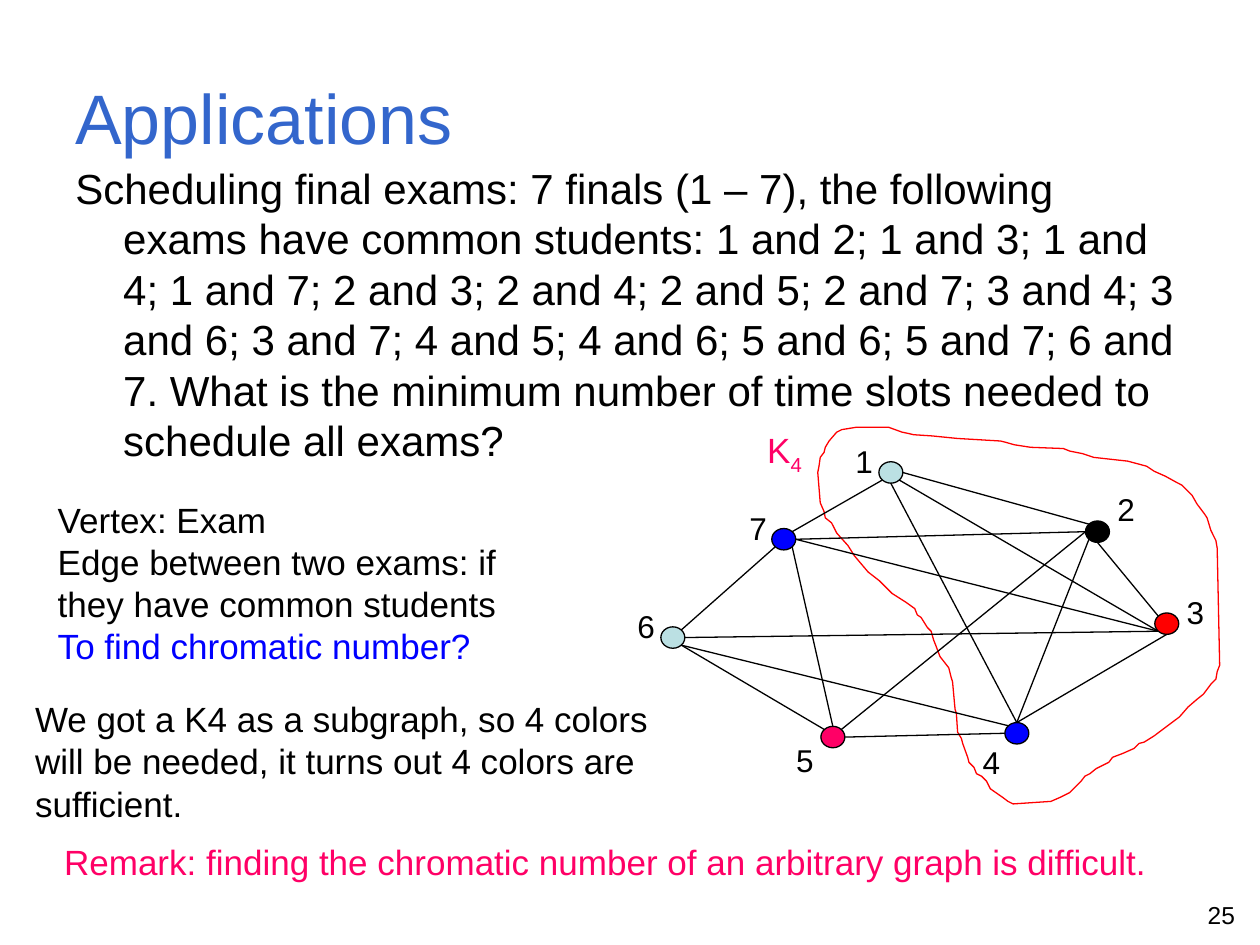
from dataclasses import dataclass
from math import cos, radians, sin

from lxml import etree
from pptx import Presentation
from pptx.dml.color import RGBColor
from pptx.enum.shapes import MSO_CONNECTOR, MSO_SHAPE
from pptx.enum.text import MSO_ANCHOR, PP_ALIGN
from pptx.oxml.ns import qn
from pptx.util import Inches, Pt

STRAIGHT = MSO_CONNECTOR.STRAIGHT
OVAL = MSO_SHAPE.OVAL
TOP, MIDDLE = MSO_ANCHOR.TOP, MSO_ANCHOR.MIDDLE
LEFT, RIGHT = PP_ALIGN.LEFT, PP_ALIGN.RIGHT
CELL = Inches(0.1)
COLUMNS, ROWS = 100, 75


@dataclass(frozen=True)
class Theme:
    font: str = "Arial"
    title: str = "3366CC"
    ink: str = "000000"
    paper: str = "FFFFFF"
    blue: str = "0000FF"
    pink: str = "FF0066"
    red: str = "FF0000"
    pale: str = "BBE0E3"
    title_size: int = 40
    body_size: int = 24
    note_size: int = 20
    label_size: int = 18
    number_size: int = 14
    line: float = 0.75


THEME = Theme()

NODES = {
    "1": ((21.7, 4.5), (17.9, 1.6), THEME.pale),
    "2": ((38.1, 9.2), (38.7, 5.4), THEME.ink),
    "3": ((43.6, 16.5), (44.2, 13.6), THEME.red),
    "4": ((31.7, 25.2), (28, 25.5), THEME.blue),
    "5": ((17.1, 25.5), (13.2, 25.3), THEME.pink),
    "6": ((4.4, 17.6), (0.6, 14.7), THEME.pale),
    "7": ((13.2, 9.8), (9.5, 6.9), THEME.blue),
}
NODE_SIZE = (1.9, 1.7)
LABEL_SIZE = (3.4, 4)

COMPASS = {"E": 0, "SE": 45, "S": 90, "SW": 135, "W": 180, "NW": 225, "N": 270, "NE": 315}
EDGES = [
    ("1", "E", "2", "NW"), ("2", "S", "3", "NW"), ("3", "S", "4", "N"), ("4", "W", "5", "E"),
    ("5", "NW", "6", "SE"), ("6", "NE", "7", "SW"), ("7", "NE", "1", "SW"), ("7", "E", "2", "W"),
    ("6", "E", "3", "SW"), ("1", "SE", "3", "SW"), ("1", "S", "4", "N"), ("2", "W", "5", "NE"),
    ("2", "SW", "4", "N"), ("3", "SW", "7", "E"), ("5", "N", "7", "SE"), ("6", "SE", "4", "NW"),
]

LOOP = [
    (76, 7), (72, 6), (67, 5), (56, 1), (31, 1), (19, 3), (15, 5), (9, 12), (6, 17), (5, 21),
    (2, 25), (1, 32), (0, 37), (2, 61), (5, 68), (6, 73), (11, 77), (15, 85), (24, 95),
    (29, 103), (40, 116), (49, 123), (56, 130), (59, 133), (70, 140), (77, 145), (79, 150),
    (82, 152), (87, 160), (90, 163), (92, 170), (94, 175), (97, 183), (104, 192), (106, 200),
    (107, 203), (109, 225), (110, 228), (111, 243), (114, 248), (115, 252), (119, 263),
    (120, 267), (124, 271), (126, 276), (130, 278), (134, 282), (137, 288), (147, 295),
    (151, 298), (155, 300), (185, 298), (192, 295), (200, 291), (209, 282), (212, 278),
    (216, 276), (221, 272), (231, 267), (234, 263), (242, 260), (251, 256), (255, 252),
    (259, 251), (267, 246), (275, 240), (287, 231), (294, 223), (301, 217), (306, 213),
    (312, 205), (316, 201), (317, 195), (319, 190), (317, 97), (316, 91), (312, 83),
    (309, 73), (307, 70), (301, 62), (297, 55), (289, 47), (285, 45), (276, 40), (267, 36),
    (261, 32), (246, 28), (219, 25), (210, 22), (200, 20), (195, 18), (169, 17), (156, 15),
    (149, 13), (145, 12), (111, 10), (91, 8),
]

QUESTION = (
    "Scheduling final exams: 7 finals (1 – 7), the following exams have common students: "
    "1 and 2; 1 and 3; 1 and 4; 1 and 7; 2 and 3; 2 and 4; 2 and 5; 2 and 7; 3 and 4; "
    "3 and 6; 3 and 7; 4 and 5; 4 and 6; 5 and 6; 5 and 7; 6 and 7. "
    "What is the minimum number of time slots needed to schedule all exams?"
)
ANSWER = "We got a K4 as a subgraph, so 4 colors will be needed, it turns out 4 colors are sufficient."
REMARK = "Remark: finding the chromatic number of an arbitrary graph is difficult."


def grid(*cells):
    return [round(cell * CELL) for cell in cells]


def style_run(span, size, color):
    span.font.name = THEME.font
    span.font.size = Pt(size)
    span.font.color.rgb = RGBColor.from_string(color)


def add_text(page, box, lines, size, anchor=TOP, align=LEFT, wrap=True):
    frame = page.shapes.add_textbox(*grid(*box)).text_frame
    frame.word_wrap = wrap
    frame.vertical_anchor = anchor
    frame.text = "\n".join(text for text, _ in lines)
    for para, (_, color) in zip(frame.paragraphs, lines):
        para.alignment = align
        for span in para.runs:
            style_run(span, size, color)
    return frame


def paint(shape, fill, line):
    shape.shadow.inherit = False
    shape.fill.solid()
    shape.fill.fore_color.rgb = RGBColor.from_string(fill)
    shape.line.color.rgb = RGBColor.from_string(line)
    shape.line.width = Pt(THEME.line)


def add_loop(page, box):
    left, top = grid(*box[:2])
    builder = page.shapes.build_freeform(*LOOP[0], scale=CELL / 10)
    builder.add_line_segments(LOOP[1:], close=True)
    paint(builder.convert_to_shape(left, top), THEME.paper, THEME.red)


def rim_point(box, node, side):
    (across, down), angle = NODES[node][0], radians(COMPASS[side])
    return grid(
        box[0] + across + NODE_SIZE[0] / 2 * cos(angle),
        box[1] + down + NODE_SIZE[1] / 2 * sin(angle),
    )


def add_graph(page, box):
    for start, start_side, end, end_side in EDGES:
        edge = page.shapes.add_connector(
            STRAIGHT, *rim_point(box, start, start_side), *rim_point(box, end, end_side)
        )
        edge.line.color.rgb = RGBColor.from_string(THEME.ink)
        edge.line.width = Pt(THEME.line)
        etree.SubElement(edge._element.spPr, qn("a:effectLst"))
    width, height = NODE_SIZE
    for name, (center, label, color) in NODES.items():
        corner = (box[0] + center[0] - width / 2, box[1] + center[1] - height / 2)
        paint(page.shapes.add_shape(OVAL, *grid(*corner, *NODE_SIZE)), color, THEME.ink)
        place = (box[0] + label[0], box[1] + label[1], *LABEL_SIZE)
        add_text(page, place, [(name, THEME.ink)], THEME.label_size, wrap=False)


def add_clique_label(page, box):
    frame = add_text(page, box, [("K", THEME.pink)], THEME.note_size, wrap=False)
    span = frame.paragraphs[0].add_run()
    span.text = "4"
    style_run(span, THEME.note_size, THEME.pink)
    span.font._element.set("baseline", "-25000")


def add_question(page, box):
    frame = add_text(page, box, [(QUESTION, THEME.ink)], THEME.body_size)
    properties = frame.paragraphs[0]._p.get_or_add_pPr()
    properties.set("marL", str(Inches(0.38)))
    properties.set("indent", str(-Inches(0.38)))


def add_model(page, box):
    lines = [
        ("Vertex: Exam", THEME.ink),
        ("Edge between two exams: if they have common students", THEME.ink),
        ("To find chromatic number?", THEME.blue),
    ]
    add_text(page, box, lines, THEME.note_size)


def build_page(page):
    add_text(page, (75.7, 70.9, 23.3, 3.1), [("25", THEME.ink)], THEME.number_size, align=RIGHT)
    add_loop(page, (64.9, 33.8, 31.9, 29.9))
    add_clique_label(page, (59.9, 33.5, 4.9, 4.4))
    add_text(page, (1.8, 54.9, 54.6, 11.1), [(ANSWER, THEME.ink)], THEME.note_size)
    add_text(page, (5, 3, 90, 12.5), [("Applications", THEME.title)], THEME.title_size, MIDDLE)
    add_question(page, (5, 12.4, 90, 24.9))
    add_model(page, (3.6, 39.1, 37.2, 14.5))
    add_text(page, (4.1, 66.2, 88.5, 4.4), [(REMARK, THEME.pink)], THEME.note_size, wrap=False)
    add_graph(page, (49, 33, 48, 31))


def main():
    deck = Presentation()
    deck.slide_width, deck.slide_height = grid(COLUMNS, ROWS)
    build_page(deck.slides.add_slide(deck.slide_layouts[6]))
    deck.save("out.pptx")


if __name__ == "__main__":
    main()
